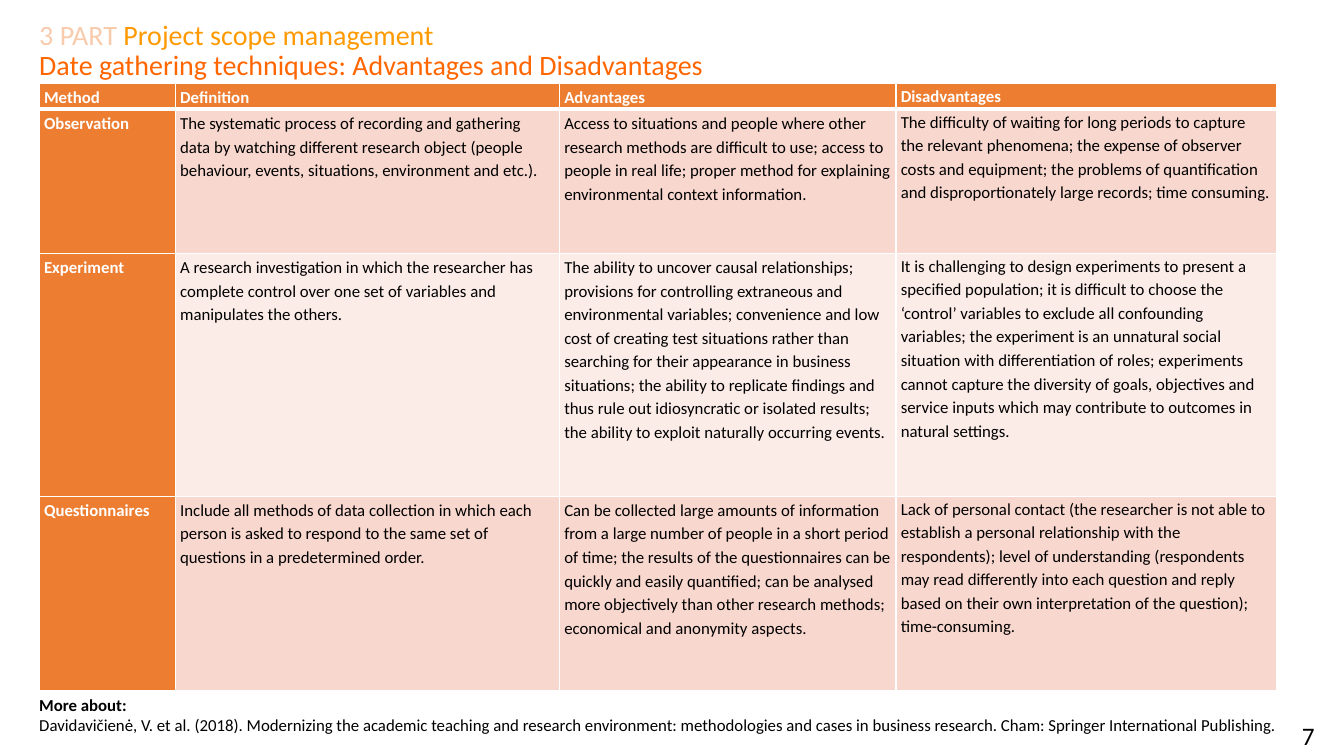
from lxml import etree
from pptx import Presentation
from pptx.dml.color import RGBColor
from pptx.enum.text import MSO_ANCHOR
from pptx.oxml import parse_xml
from pptx.oxml.ns import nsdecls
from pptx.util import Cm, Pt

ORANGE, WHITE, BLACK = "ED7D31", "FFFFFF", "000000"
ROW_FILLS = [ORANGE, "F8D7CE", "FCECE8", "F8D7CE"]
COLUMN_WIDTHS = [3.43, 9.68, 8.48, 9.6]
ROW_HEIGHTS = [0.64, 3.63, 6.12, 4.9]
METHODS = [
    ["Method", "Definition", "Advantages", "Disadvantages"],
    [
        "Observation",
        "The systematic process of recording and gathering data by watching different research object "
        "(people behaviour, events, situations, environment and etc.).",
        "Access to situations and people where other research methods are difficult to use; access to "
        "people in real life; proper method for explaining environmental context information.",
        "The difficulty of waiting for long periods to capture the relevant phenomena; the expense of "
        "observer costs and equipment; the problems of quantification and disproportionately large "
        "records; time consuming.",
    ],
    [
        "Experiment",
        "A research investigation in which the researcher has complete control over one set of variables "
        "and manipulates the others.",
        "The ability to uncover causal relationships; provisions for controlling extraneous and "
        "environmental variables; convenience and low cost of creating test situations rather than "
        "searching for their appearance in business situations; the ability to replicate findings and "
        "thus rule out idiosyncratic or isolated results; the ability to exploit naturally occurring events.",
        "It is challenging to design experiments to present a specified population; it is difficult to "
        "choose the ‘control’ variables to exclude all confounding variables; the experiment is an "
        "unnatural social situation with differentiation of roles; experiments cannot capture the "
        "diversity of goals, objectives and service inputs which may contribute to outcomes in natural settings.",
    ],
    [
        "Questionnaires",
        "Include all methods of data collection in which each person is asked to respond to the same set "
        "of questions in a predetermined order.",
        "Can be collected large amounts of information from a large number of people in a short period of "
        "time; the results of the questionnaires can be quickly and easily quantified; can be analysed "
        "more objectively than other research methods; economical and anonymity aspects.",
        "Lack of personal contact (the researcher is not able to establish a personal relationship with "
        "the respondents); level of understanding (respondents may read differently into each question "
        "and reply based on their own interpretation of the question); time-consuming.",
    ],
]


def format_font(font, size, color, bold=False):
    font.name = "Calibri"
    font.size = Pt(size)
    font.bold = bold
    font.color.rgb = RGBColor.from_string(color)


def add_text_frame(left, top, width, height):
    text_frame = slide.shapes.add_textbox(Cm(left), Cm(top), Cm(width), Cm(height)).text_frame
    text_frame.word_wrap = True
    return text_frame


presentation = Presentation()
presentation.slide_width = Cm(33.87)
presentation.slide_height = Cm(19.05)
slide = presentation.slides.add_slide(presentation.slide_layouts[6])

title = add_text_frame(0.74, 1.07, 32.41, 0.46)
title.vertical_anchor = MSO_ANCHOR.MIDDLE
heading = title.paragraphs[0]
heading.line_spacing = 0.9
for text, color in [("3 PART ", "F8CBAD"), ("Project scope management", "FF9900")]:
    run = heading.add_run()
    run.text = text
    format_font(run.font, 20, color)
heading.add_line_break()
run = heading.add_run()
run.text = "Date gathering techniques: Advantages and Disadvantages"
format_font(run.font, 20, "FF6600")

page_number = add_text_frame(32.56, 18.03, 1.17, 1.02)
page_number.text = "7"
format_font(page_number.paragraphs[0].runs[0].font, 18, BLACK)

reference = add_text_frame(0.74, 17.37, 31.83, 1.27)
reference.text = (
    "More about:\n"
    "Davidavičienė, V. et al. (2018). Modernizing the academic teaching and research environment: "
    "methodologies and cases in business research. Cham: Springer International Publishing."
)
for paragraph, bold in zip(reference.paragraphs, [True, False]):
    format_font(paragraph.runs[0].font, 12, BLACK, bold)

table = slide.shapes.add_table(
    len(ROW_HEIGHTS), len(COLUMN_WIDTHS), Cm(0.99), Cm(2.11), Cm(sum(COLUMN_WIDTHS)), Cm(sum(ROW_HEIGHTS))
).table
for column, width in zip(table.columns, COLUMN_WIDTHS):
    column.width = Cm(width)
for row, height in zip(table.rows, ROW_HEIGHTS):
    row.height = Cm(height)

for row_index, texts in enumerate(METHODS):
    for column_index, text in enumerate(texts):
        cell = table.cell(row_index, column_index)
        is_heading = row_index == 0 or column_index == 0
        cell.margin_left = cell.margin_right = Cm(0.12)
        cell.margin_top = cell.margin_bottom = Cm(0 if column_index == 3 else 0.03)

        properties = cell._tc.get_or_add_tcPr()
        for side in "LRTB":
            under_header = (row_index, side) in [(0, "B"), (1, "T")]
            border = parse_xml(f'<a:ln{side} {nsdecls("a")} w="{Pt(3 if under_header else 1)}"/>')
            fill = etree.SubElement(border, border.tag.replace(f"ln{side}", "solidFill"))
            etree.SubElement(fill, fill.tag.replace("solidFill", "srgbClr"), val=WHITE)
            properties.append(border)
        cell.fill.solid()
        cell.fill.fore_color.rgb = RGBColor.from_string(ORANGE if is_heading else ROW_FILLS[row_index])

        cell.text_frame.text = text
        paragraph = cell.text_frame.paragraphs[0]
        paragraph.line_spacing = 1.15
        paragraph.space_after = Pt(2)
        format_font(paragraph.runs[0].font, 12, WHITE if is_heading else BLACK, is_heading)

presentation.save("out.pptx")
